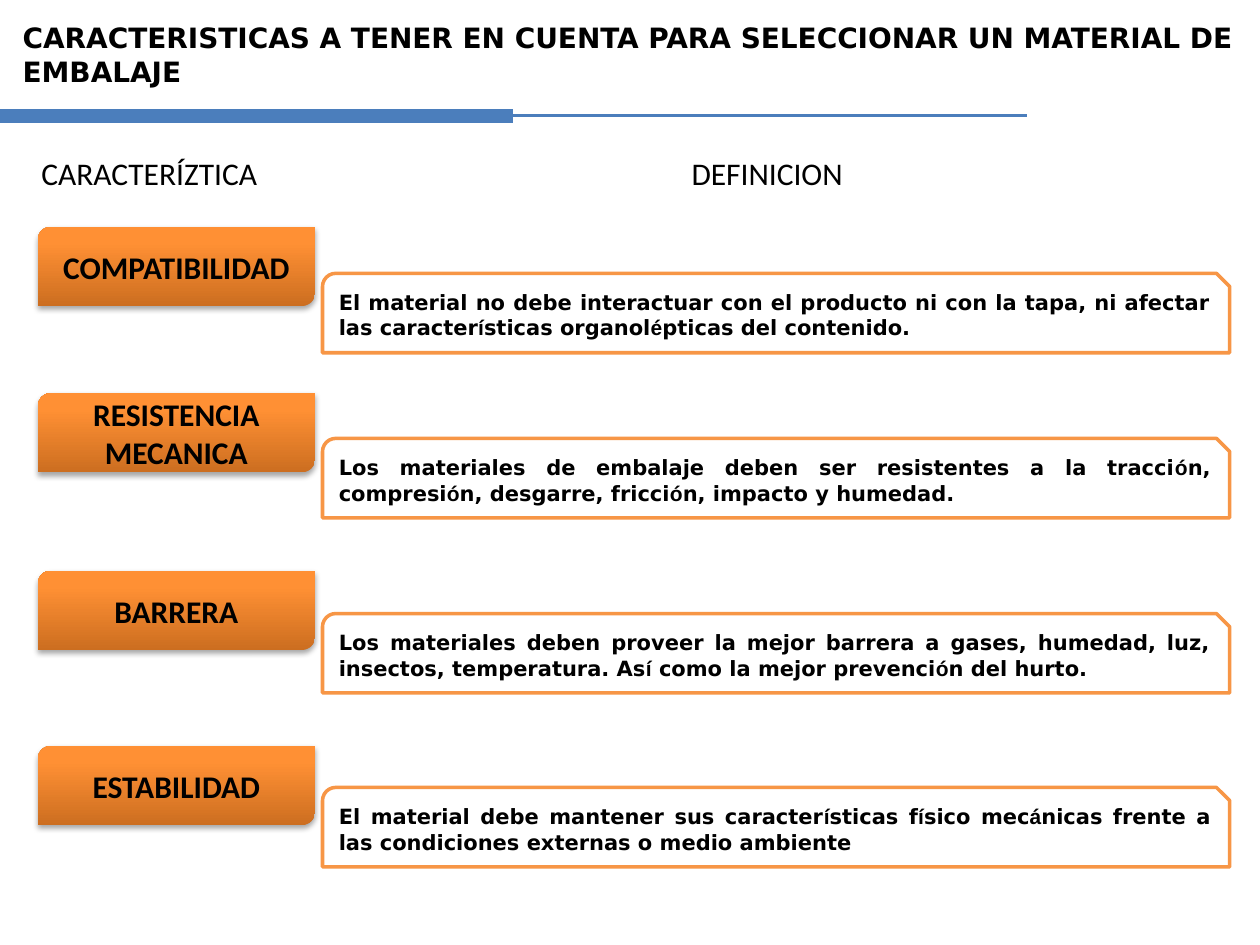
import copy
import dataclasses
import itertools

import pptx
import pptx.dml.color
import pptx.enum.shapes
import pptx.enum.text
import pptx.oxml
import pptx.oxml.ns
import pptx.oxml.xmlchemy
import pptx.util

Inches = pptx.util.Inches
Pt = pptx.util.Pt
RGB = pptx.dml.color.RGBColor.from_string
SHAPE = pptx.enum.shapes.MSO_SHAPE
ALIGN = pptx.enum.text.PP_ALIGN
ANCHOR = pptx.enum.text.MSO_ANCHOR
qn = pptx.oxml.ns.qn


@dataclasses.dataclass(frozen=True)
class Theme:
    ink: str = "000000"
    paper: str = "FFFFFF"
    rule: str = "4B7EBC"
    outline: str = "F79646"
    label_gradient: tuple = ((0, "CC6E20"), (0.8, "FF9034"), (1, "FF9136"))
    heading_font: str = "DejaVu Sans"
    label_font: str = "Calibri"
    accent_font: str = "Arial"
    title_size: int = 16
    label_size: int = 18
    definition_size: int = 12


THEME = Theme()
ACCENTED = "áéíóú"
TITLE = "CARACTERISTICAS A TENER EN CUENTA PARA SELECCIONAR UN MATERIAL DE EMBALAJE"
COLUMN_HEADINGS = ((0.23, "CARACTERÍZTICA"), (5.39, "DEFINICION"))
PROPERTIES = (
    (1.8, 2.17, "COMPATIBILIDAD",
     "El material no debe interactuar con el producto ni con la tapa, "
     "ni afectar las características organolépticas del contenido."),
    (3.12, 3.48, "RESISTENCIA MECANICA",
     "Los materiales de embalaje deben ser resistentes a la tracción, "
     "compresión, desgarre, fricción, impacto y humedad."),
    (4.53, 4.87, "BARRERA",
     "Los materiales deben proveer la mejor barrera a gases, humedad, luz, "
     "insectos, temperatura. Así como la mejor prevención del hurto."),
    (5.92, 6.25, "ESTABILIDAD",
     "El material debe mantener sus características físico mecánicas "
     "frente a las condiciones externas o medio ambiente"),
)
SHADOW = (
    '<a:outerShdw xmlns:a="http://schemas.openxmlformats.org/drawingml/2006/main" '
    'blurRad="40000" dist="23000" dir="5400000" rotWithShape="0">'
    '<a:srgbClr val="000000"><a:alpha val="35000"/></a:srgbClr></a:outerShdw>'
)


def style_font(font, name, size, bold=False):
    font.name = name
    font.size = Pt(size)
    font.bold = bold
    font.color.rgb = RGB(THEME.ink)


def write_text(frame, text, name, size, bold=False, align=ALIGN.LEFT):
    frame.word_wrap = True
    frame.text = text
    paragraph = frame.paragraphs[0]
    paragraph.alignment = align
    style_font(paragraph.runs[0].font, name, size, bold)


def add_title(slide):
    title = slide.shapes.title
    title.left, title.top = Inches(0.08), Inches(0.11)
    title.width, title.height = Inches(9.81), Inches(0.64)
    write_text(title.text_frame, TITLE, THEME.heading_font, THEME.title_size, True)
    title.text_frame.vertical_anchor = ANCHOR.MIDDLE
    title.text_frame.auto_size = pptx.enum.text.MSO_AUTO_SIZE.NONE


def add_rule(slide, length, weight):
    y = Inches(0.92)
    rule = slide.shapes.add_connector(
        pptx.enum.shapes.MSO_CONNECTOR.STRAIGHT, 0, y, Inches(length), y)
    rule.line.color.rgb = RGB(THEME.rule)
    rule.line.width = Pt(weight)
    rule._element.spPr.append(pptx.oxml.xmlchemy.OxmlElement("a:effectLst"))


def add_column_heading(slide, left, text):
    heading = slide.shapes.add_textbox(
        Inches(left), Inches(1.17), Inches(1.97), Inches(0.4))
    write_text(heading.text_frame, text, THEME.label_font, THEME.label_size)


def add_box(slide, kind, left, top, width):
    box = slide.shapes.add_shape(
        kind, Inches(left), Inches(top), Inches(width), Inches(0.63))
    box.shadow.inherit = False
    box.text_frame.vertical_anchor = ANCHOR.MIDDLE
    return box


def add_label(slide, top, text):
    label = add_box(slide, SHAPE.ROUND_2_DIAG_RECTANGLE, 0.3, top, 2.2)
    label.line.fill.background()
    label.fill.gradient()
    label.fill.gradient_angle = 90
    properties = label._element.spPr
    stops = properties.find(qn("a:gradFill")).find(qn("a:gsLst"))
    stops.insert(1, copy.deepcopy(stops[0]))
    for stop, (position, color) in zip(label.fill.gradient_stops, THEME.label_gradient):
        stop.position = position
        stop.color.rgb = RGB(color)
    properties.find(qn("a:effectLst")).append(pptx.oxml.parse_xml(SHADOW))
    write_text(label.text_frame, text, THEME.label_font, THEME.label_size,
               True, ALIGN.CENTER)


def add_definition(slide, top, text):
    definition = add_box(slide, SHAPE.SNIP_ROUND_RECTANGLE, 2.56, top, 7.2)
    definition.fill.solid()
    definition.fill.fore_color.rgb = RGB(THEME.paper)
    definition.line.color.rgb = RGB(THEME.outline)
    definition.line.width = Pt(2)
    definition.text_frame.word_wrap = True
    paragraph = definition.text_frame.paragraphs[0]
    paragraph.alignment = ALIGN.JUSTIFY
    for accented, letters in itertools.groupby(text, lambda letter: letter in ACCENTED):
        run = paragraph.add_run()
        run.text = "".join(letters)
        name = THEME.accent_font if accented else THEME.heading_font
        style_font(run.font, name, THEME.definition_size, True)


def main():
    deck = pptx.Presentation()
    deck.slide_width, deck.slide_height = Inches(10), Inches(7.5)
    slide = deck.slides.add_slide(deck.slide_layouts.get_by_name("Title Only"))
    add_title(slide)
    for length, weight in ((8.15, 1.75), (4.07, 8)):
        add_rule(slide, length, weight)
    for left, text in COLUMN_HEADINGS:
        add_column_heading(slide, left, text)
    for label_top, definition_top, name, meaning in PROPERTIES:
        add_label(slide, label_top, name)
        add_definition(slide, definition_top, meaning)
    deck.save("out.pptx")


if __name__ == "__main__":
    main()
